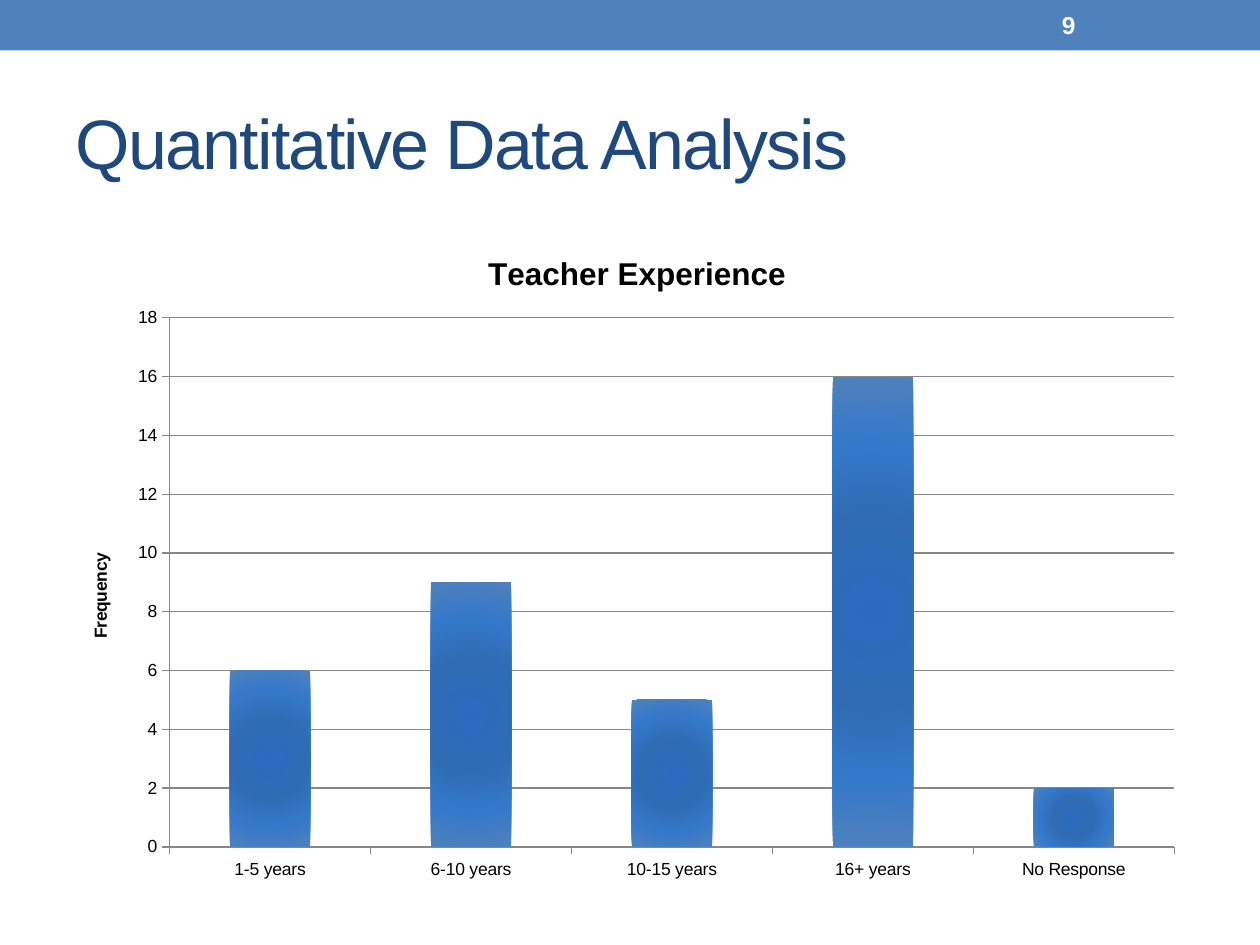
from lxml import etree
from pptx import Presentation
from pptx.chart.data import CategoryChartData
from pptx.dml.color import RGBColor
from pptx.enum.chart import XL_CHART_TYPE as ChartType, XL_TICK_MARK as TickMark
from pptx.enum.shapes import MSO_SHAPE as Shape
from pptx.enum.text import MSO_ANCHOR as Anchor, PP_ALIGN as Align
from pptx.oxml import parse_xml
from pptx.oxml.ns import nsdecls, qn
from pptx.util import Inches, Pt

FONT = "Arial"
BLUE = RGBColor(0x4F, 0x81, 0xBD)
NAVY = RGBColor(0x1F, 0x49, 0x7D)
WHITE = RGBColor(0xFF, 0xFF, 0xFF)
BLACK = RGBColor(0, 0, 0)
GRAY = RGBColor(0x87, 0x87, 0x87)
# Bar gradient from centre to edge: percent and colour
BAR_STOPS = [
    (0, RGBColor(0x2B, 0x6B, 0xBF)),
    (40, RGBColor(0x2F, 0x6C, 0xB3)),
    (70, RGBColor(0x35, 0x78, 0xCA)),
    (100, BLUE),
]
EXPERIENCE = {"1-5 years": 6, "6-10 years": 9, "10-15 years": 5,
              "16+ years": 16, "No Response": 2}


def style_font(font, size, color, bold=False):
    font.name, font.size, font.bold = FONT, Pt(size), bold
    font.color.rgb = color


def add_run(paragraph, text, size, color, bold=False):
    run = paragraph.add_run()
    run.text = text
    style_font(run.font, size, color, bold)
    return run


def add_header(slide, left, top, width, height):
    # Band across the top
    band = slide.shapes.add_shape(Shape.RECTANGLE, left, top, width, height)
    band.shadow.inherit = False
    band.fill.solid()
    band.fill.fore_color.rgb = BLUE
    band.line.fill.background()

    # Slide number
    box = slide.shapes.add_textbox(left + Inches(8.33), top + Inches(0.02),
                                   Inches(1.17), Inches(0.36))
    frame = box.text_frame
    frame.word_wrap = True
    frame.vertical_anchor = Anchor.MIDDLE
    add_run(frame.paragraphs[0], "9", 14, WHITE, bold=True)


def add_title(slide, left, top, width, height):
    title = slide.shapes.title
    title.left, title.top, title.width, title.height = left, top, width, height
    frame = title.text_frame
    frame.vertical_anchor = Anchor.MIDDLE
    paragraph = frame.paragraphs[0]
    paragraph.alignment = Align.LEFT
    run = add_run(paragraph, "Quantitative Data Analysis", 40, NAVY)
    run.font._element.set("spc", "-100")


def set_layout(element, index, target="", **fractions):
    """Place a chart part by fractions of the chart's size."""
    for layout in element.findall(qn("c:layout")):
        element.remove(layout)
    layout = etree.Element(qn("c:layout"))
    manual = etree.SubElement(layout, qn("c:manualLayout"))
    if target:
        etree.SubElement(manual, qn("c:layoutTarget"), val=target)
    for axis in ("x", "y"):
        etree.SubElement(manual, qn(f"c:{axis}Mode"), val="edge")
    for name, value in fractions.items():
        etree.SubElement(manual, qn(f"c:{name}"), val=str(value))
    element.insert(index, layout)


def fill_bars(series):
    series.format.fill.solid()
    series.format.fill.fore_color.rgb = BLUE
    stops = "".join(
        f'<a:gs pos="{percent * 1000}"><a:srgbClr val="{color}"/></a:gs>'
        for percent, color in BAR_STOPS)
    gradient = parse_xml(
        f'<a:gradFill {nsdecls("a")} rotWithShape="1"><a:gsLst>{stops}</a:gsLst>'
        '<a:path path="circle"><a:fillToRect l="50000" t="50000" r="50000" '
        'b="50000"/></a:path></a:gradFill>')
    solid = series._element.find(qn("c:spPr")).find(qn("a:solidFill"))
    solid.getparent().replace(solid, gradient)


def add_experience_chart(slide, left, top, width, height):
    data = CategoryChartData()
    data.categories = list(EXPERIENCE)
    data.add_series("Series 1", list(EXPERIENCE.values()))
    chart = slide.shapes.add_chart(ChartType.COLUMN_CLUSTERED, left, top,
                                   width, height, data).chart
    style_font(chart.font, 10, BLACK)
    chart.has_legend = False

    # Chart title
    chart.has_title = True
    title = chart.chart_title
    add_run(title.text_frame.paragraphs[0], "Teacher Experience", 18, BLACK, bold=True)
    set_layout(title._element, 1, x=0.37, y=0.04)

    # Bars
    plot = chart.plots[0]
    plot.gap_width = 150
    plot.vary_by_categories = False
    fill_bars(plot.series[0])

    # Axes
    value_axis = chart.value_axis
    for axis in (chart.category_axis, value_axis):
        axis.major_tick_mark = TickMark.OUTSIDE
        axis.minor_tick_mark = TickMark.NONE
        axis.format.line.color.rgb = GRAY
    value_axis.minimum_scale, value_axis.maximum_scale = 0, 18
    value_axis.major_unit = 2
    value_axis.has_major_gridlines = True
    value_axis.major_gridlines.format.line.color.rgb = GRAY
    axis_title = value_axis.axis_title
    add_run(axis_title.text_frame.paragraphs[0], "Frequency", 10, BLACK, bold=True)
    body = axis_title.text_frame._txBody.find(qn("a:bodyPr"))
    body.set("rot", "-5400000")
    body.set("vert", "horz")
    set_layout(axis_title._element, 1, x=0.02, y=0.49)

    # Plot area
    plot_area = chart._chartSpace.find(qn("c:chart")).find(qn("c:plotArea"))
    set_layout(plot_area, 0, "inner", x=0.094, y=0.145, w=0.886, h=0.788)


def main():
    presentation = Presentation()
    presentation.slide_width = Inches(10)
    presentation.slide_height = Inches(7.5)
    slide = presentation.slides.add_slide(presentation.slide_layouts[5])
    add_header(slide, 0, 0, Inches(10), Inches(0.4))
    add_title(slide, Inches(0.5), Inches(0.58), Inches(9), Inches(1.08))
    add_experience_chart(slide, Inches(0.5), Inches(1.75), Inches(9), Inches(5.33))
    presentation.save("out.pptx")


if __name__ == "__main__":
    main()
